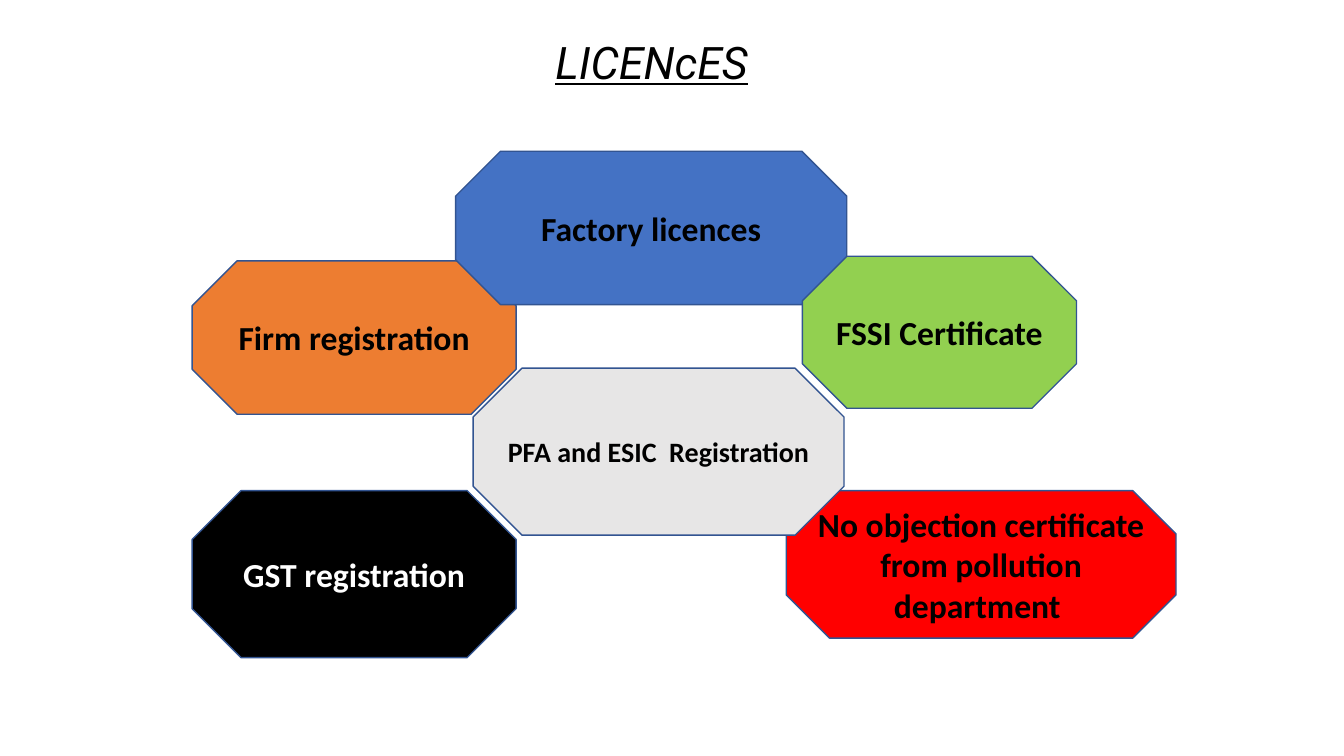
import dataclasses

import pptx
import pptx.dml.color
import pptx.enum.shapes
import pptx.enum.text
import pptx.util


@dataclasses.dataclass(frozen=True)
class Theme:
    title_font: str = "Roboto"
    body_font: str = "Calibri"
    title_size: int = 32
    label_size: int = 24
    small_size: int = 20
    outline_width: int = 1
    black: str = "000000"
    white: str = "FFFFFF"
    outline: str = "325491"
    orange: str = "ED7D31"
    blue: str = "4472C4"
    red: str = "FF0000"
    green: str = "92D050"
    grey: str = "E7E6E6"


THEME = Theme()
WIDTH = pptx.util.Inches(13.33)
HEIGHT = pptx.util.Inches(7.5)


def rgb(value):
    return pptx.dml.color.RGBColor.from_string(value)


def place(left, top, width, height):
    return (
        round(WIDTH * left / 100),
        round(HEIGHT * top / 100),
        round(WIDTH * width / 100),
        round(HEIGHT * height / 100),
    )


def write(sp, text, font, size, color):
    tf = sp.text_frame
    tf.word_wrap = True
    p = tf.paragraphs[0]
    p.alignment = pptx.enum.text.PP_ALIGN.CENTER
    r = p.add_run()
    r.text = text
    r.font.name = font
    r.font.size = pptx.util.Pt(size)
    r.font.color.rgb = rgb(color)
    return p, r


def add_title(s, text, box):
    sp = s.shapes.add_textbox(*place(*box))
    p, r = write(sp, text, THEME.title_font, THEME.title_size, THEME.black)
    p.line_spacing = 0.9
    r.font.italic = True
    r.font.underline = True


def add_licence(s, text, box, fill, color=THEME.black, size=THEME.label_size):
    sp = s.shapes.add_shape(pptx.enum.shapes.MSO_SHAPE.OCTAGON, *place(*box))
    sp.shadow.inherit = False
    sp.fill.solid()
    sp.fill.fore_color.rgb = rgb(fill)
    sp.line.color.rgb = rgb(THEME.outline)
    sp.line.width = pptx.util.Pt(THEME.outline_width)
    sp.text_frame.vertical_anchor = pptx.enum.text.MSO_ANCHOR.MIDDLE
    p, r = write(sp, text, THEME.body_font, size, color)
    r.font.bold = True


def main():
    prs = pptx.Presentation()
    prs.slide_width = WIDTH
    prs.slide_height = HEIGHT
    s = prs.slides.add_slide(prs.slide_layouts[6])

    add_title(s, "LICENcES", (0, 4.7, 97, 9))
    add_licence(s, "Firm registration", (14.3, 34.5, 24.1, 20.3), THEME.orange)
    add_licence(s, "Factory licences", (33.9, 20, 29.1, 20.3), THEME.blue)
    add_licence(
        s,
        "No objection certificate from pollution department ",
        (58.5, 64.9, 29, 19.5),
        THEME.red,
    )
    add_licence(s, "FSSI Certificate ", (59.7, 33.9, 20.4, 20.1), THEME.green)
    add_licence(
        s, "GST registration", (14.3, 64.9, 24.1, 22.1), THEME.black, color=THEME.white
    )
    add_licence(
        s,
        "PFA and ESIC  Registration ",
        (35.2, 48.7, 27.6, 22.1),
        THEME.grey,
        size=THEME.small_size,
    )

    prs.save("out.pptx")


if __name__ == "__main__":
    main()
